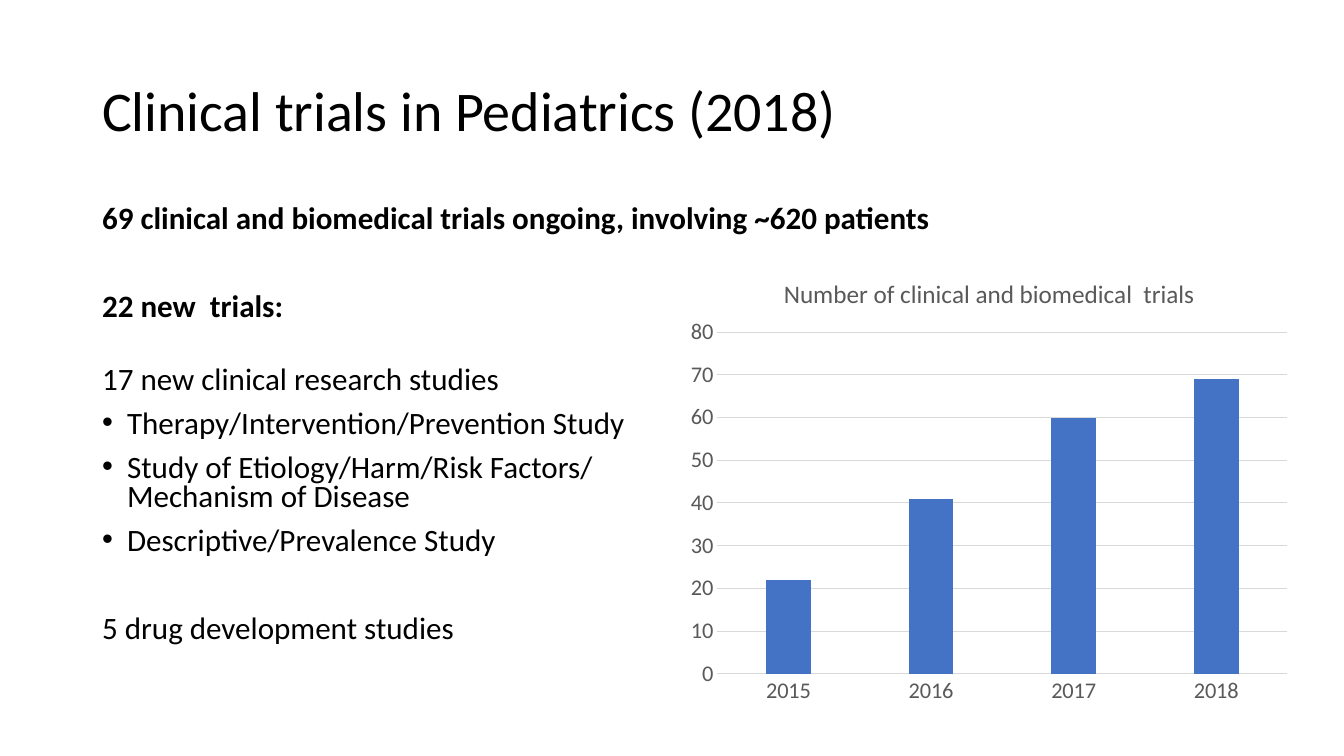
import pptx
import pptx.chart.data
import pptx.dml.color
import pptx.enum.chart
import pptx.enum.text
import pptx.oxml
import pptx.oxml.ns
import pptx.util

EMU_PER_PX = 914400 / 100.8
FONT = "Calibri"
BLACK, GRAY, GRID, BLUE = "000000", "595959", "D9D9D9", "4472C4"
STATEMENTS = [
    ("69 clinical and biomedical trials ongoing, involving ~620 patients", True, False, 10),
    ("22 new  trials:", True, False, 41),
    ("17 new clinical research studies", False, False, 31),
    ("Therapy/Intervention/Prevention Study", False, True, 10),
    ("Study of Etiology/Harm/Risk Factors/\vMechanism of Disease", False, True, 10),
    ("Descriptive/Prevalence Study", False, True, 10),
    ("5 drug development studies", False, False, 41),
]
TRIALS_BY_YEAR = {"2015": 22, "2016": 41, "2017": 60, "2018": 69}


def px(length):
    return pptx.util.Emu(round(length * EMU_PER_PX))


def color(value):
    return pptx.dml.color.RGBColor.from_string(value)


def apply(target, values):
    for name, value in values.items():
        setattr(target, name, value)


def format_font(font, size, value, bold=False):
    apply(font, {"name": FONT, "size": pptx.util.Pt(size), "bold": bold})
    font.color.rgb = color(value)


def place(shape, box):
    apply(shape, dict(zip(("left", "top", "width", "height"), map(px, box))))


def fill_frame(shape, box, anchor):
    place(shape, box)
    frame = shape.text_frame
    apply(frame, {
        "word_wrap": True,
        "auto_size": pptx.enum.text.MSO_AUTO_SIZE.NONE,
        "vertical_anchor": anchor,
    })
    return frame


def add_title(slide, box):
    frame = fill_frame(slide.shapes.title, box, pptx.enum.text.MSO_ANCHOR.MIDDLE)
    paragraph = frame.paragraphs[0]
    apply(paragraph, {
        "text": "Clinical trials in Pediatrics (2018)",
        "alignment": pptx.enum.text.PP_ALIGN.LEFT,
        "line_spacing": 0.9,
    })
    format_font(paragraph.runs[0].font, 40, BLACK)


def set_bullet(paragraph, bulleted):
    properties = paragraph._p.get_or_add_pPr()
    indent = px(25) if bulleted else 0
    properties.set("marL", str(indent))
    properties.set("indent", str(-indent))
    namespace = pptx.oxml.ns.nsdecls("a")
    if bulleted:
        properties.append(pptx.oxml.parse_xml(f'<a:buFont {namespace} typeface="Arial"/>'))
        properties.append(pptx.oxml.parse_xml(f'<a:buChar {namespace} char="•"/>'))
    else:
        properties.append(pptx.oxml.parse_xml(f"<a:buNone {namespace}/>"))


def add_statements(slide, box):
    frame = fill_frame(slide.placeholders[1], box, pptx.enum.text.MSO_ANCHOR.TOP)
    for index, (text, bold, bulleted, space) in enumerate(STATEMENTS):
        paragraph = frame.add_paragraph() if index else frame.paragraphs[0]
        apply(paragraph, {
            "text": text,
            "alignment": pptx.enum.text.PP_ALIGN.LEFT,
            "line_spacing": 0.8,
            "space_before": pptx.util.Pt(space),
            "space_after": pptx.util.Pt(0),
        })
        set_bullet(paragraph, bulleted)
        for run in paragraph.runs:
            format_font(run.font, 22.2, BLACK, bold)


def make_layout(fractions, inner=False):
    target = '<c:layoutTarget val="inner"/>' if inner else ""
    modes = "".join(f'<c:{name}Mode val="edge"/>' for name in "xy")
    sizes = "".join(f'<c:{name} val="{value:.2f}"/>' for name, value in fractions.items())
    return pptx.oxml.parse_xml(
        f'<c:layout {pptx.oxml.ns.nsdecls("c")}><c:manualLayout>'
        f"{target}{modes}{sizes}</c:manualLayout></c:layout>"
    )


def set_layout(element, layout, position):
    for existing in element.findall(pptx.oxml.ns.qn("c:layout")):
        element.remove(existing)
    element.insert(position, layout)


def format_line(line):
    line.color.rgb = color(GRID)
    line.width = pptx.util.Pt(0.75)


def format_axes(chart):
    for axis in (chart.category_axis, chart.value_axis):
        apply(axis, {
            "major_tick_mark": pptx.enum.chart.XL_TICK_MARK.NONE,
            "minor_tick_mark": pptx.enum.chart.XL_TICK_MARK.NONE,
        })
        format_font(axis.tick_labels.font, 16, GRAY)
    format_line(chart.category_axis.format.line)
    apply(chart.value_axis, {
        "minimum_scale": 0, "maximum_scale": 80, "major_unit": 10,
        "has_major_gridlines": True,
    })
    format_line(chart.value_axis.major_gridlines.format.line)
    chart.value_axis.format.line.fill.background()


def add_trials_chart(slide, box):
    data = pptx.chart.data.CategoryChartData()
    data.categories = list(TRIALS_BY_YEAR)
    data.add_series("Series 1", list(TRIALS_BY_YEAR.values()))
    chart = slide.shapes.add_chart(
        pptx.enum.chart.XL_CHART_TYPE.COLUMN_CLUSTERED, *map(px, box), data
    ).chart
    apply(chart, {"has_legend": False, "has_title": True})
    format_font(chart.font, 10, BLACK)

    title = chart.chart_title
    title.include_in_layout = False
    paragraph = title.text_frame.paragraphs[0]
    paragraph.text = "Number of clinical and biomedical  trials"
    format_font(paragraph.runs[0].font, 18, GRAY)
    set_layout(title._element, make_layout({"x": 0.16, "y": 0.05}), 1)

    plot = chart.plots[0]
    apply(plot, {"gap_width": 219, "overlap": -27, "vary_by_categories": False})
    column_fill = plot.series[0].format.fill
    column_fill.solid()
    column_fill.fore_color.rgb = color(BLUE)
    format_axes(chart)
    plot_area = chart._chartSpace.chart.plotArea
    fractions = {"x": 0.06, "y": 0.18, "w": 0.92, "h": 0.73}
    set_layout(plot_area, make_layout(fractions, inner=True), 0)


def main():
    presentation = pptx.Presentation()
    apply(presentation, {"slide_width": px(1344), "slide_height": px(756)})
    slide = presentation.slides.add_slide(presentation.slide_layouts[1])
    add_title(slide, (92, 40, 1159, 146))
    add_statements(slide, (92, 201, 1159, 480))
    add_trials_chart(slide, (680, 248, 620, 468))
    presentation.save("out.pptx")


if __name__ == "__main__":
    main()
